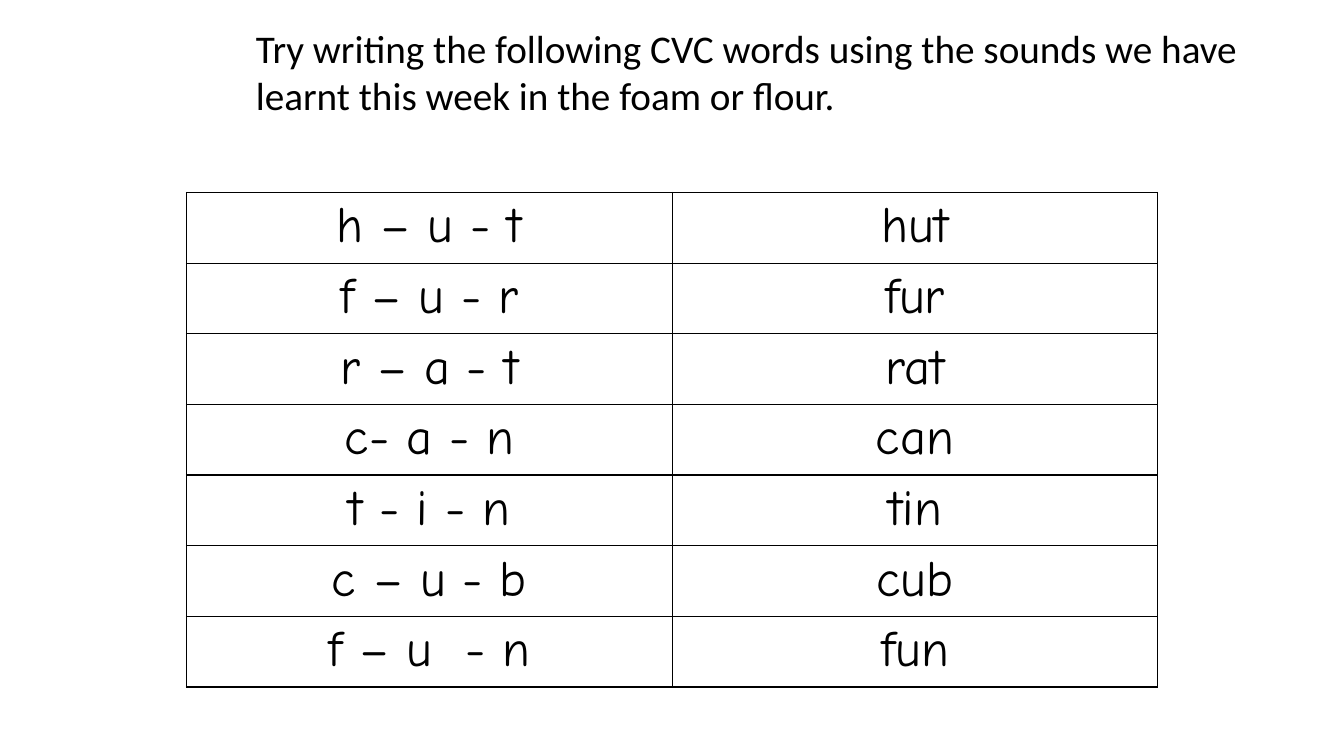
from dataclasses import dataclass

from lxml.etree import SubElement
from pptx import Presentation
from pptx.dml.color import RGBColor
from pptx.enum.text import MSO_AUTO_SIZE, PP_ALIGN
from pptx.oxml.ns import qn
from pptx.slide import Slide
from pptx.table import _Cell
from pptx.text.text import _Paragraph
from pptx.util import Cm, Pt


@dataclass(frozen=True)
class Theme:
    ink: str = "000000"
    paper: str = "FFFFFF"
    task_font: str = "Calibri"
    word_font: str = "Comic Neue"
    task_size: int = 28
    word_size: int = 36
    border: int = 1


@dataclass(frozen=True)
class Word:
    sounds: str
    whole: str


THEME = Theme()
TASK = ("Try writing the following CVC words using the sounds "
        "we have learnt this week in the foam or flour.")
WORDS = [
    Word("h – u - t", "hut"),
    Word("f – u - r", "fur"),
    Word("r – a - t", "rat"),
    Word("c- a - n", "can"),
    Word("t - i - n", "tin"),
    Word("c – u - b", "cub"),
    Word("f – u  - n", "fun"),
]
ROW_HEIGHT = Cm(1.78)
COL_WIDTH = Cm(12.24)


def style_text(para: _Paragraph, font: str, size: int) -> None:
    for run in para.runs:
        run.font.name = font
        run.font.size = Pt(size)
        run.font.color.rgb = RGBColor.from_string(THEME.ink)


def add_task(slide: Slide) -> None:
    box = slide.shapes.add_textbox(Cm(6.2), Cm(0.48), Cm(25.58), Cm(2.64))
    frame = box.text_frame
    frame.word_wrap = True
    frame.auto_size = MSO_AUTO_SIZE.SHAPE_TO_FIT_TEXT
    frame.text = TASK
    style_text(frame.paragraphs[0], THEME.task_font, THEME.task_size)


def add_borders(cell: _Cell) -> None:
    props = cell._tc.get_or_add_tcPr()
    for side in ("a:lnL", "a:lnR", "a:lnT", "a:lnB"):
        line = SubElement(props, qn(side), w=str(Pt(THEME.border)))
        fill = SubElement(line, qn("a:solidFill"))
        SubElement(fill, qn("a:srgbClr"), val=THEME.ink)


def fill_cell(cell: _Cell, text: str) -> None:
    add_borders(cell)
    cell.fill.solid()
    cell.fill.fore_color.rgb = RGBColor.from_string(THEME.paper)
    cell.text_frame.text = text
    para = cell.text_frame.paragraphs[0]
    para.alignment = PP_ALIGN.CENTER
    style_text(para, THEME.word_font, THEME.word_size)


def add_words(slide: Slide) -> None:
    table = slide.shapes.add_table(
        len(WORDS), 2, Cm(4.7), Cm(4.85),
        2 * COL_WIDTH, len(WORDS) * ROW_HEIGHT).table
    table.first_row = False
    table.horz_banding = False
    for row, word in enumerate(WORDS):
        fill_cell(table.cell(row, 0), word.sounds)
        fill_cell(table.cell(row, 1), word.whole)


def main() -> None:
    deck = Presentation()
    deck.slide_width = Cm(33.87)
    deck.slide_height = Cm(19.05)
    slide = deck.slides.add_slide(deck.slide_layouts[6])
    add_task(slide)
    add_words(slide)
    deck.save("out.pptx")


if __name__ == "__main__":
    main()
